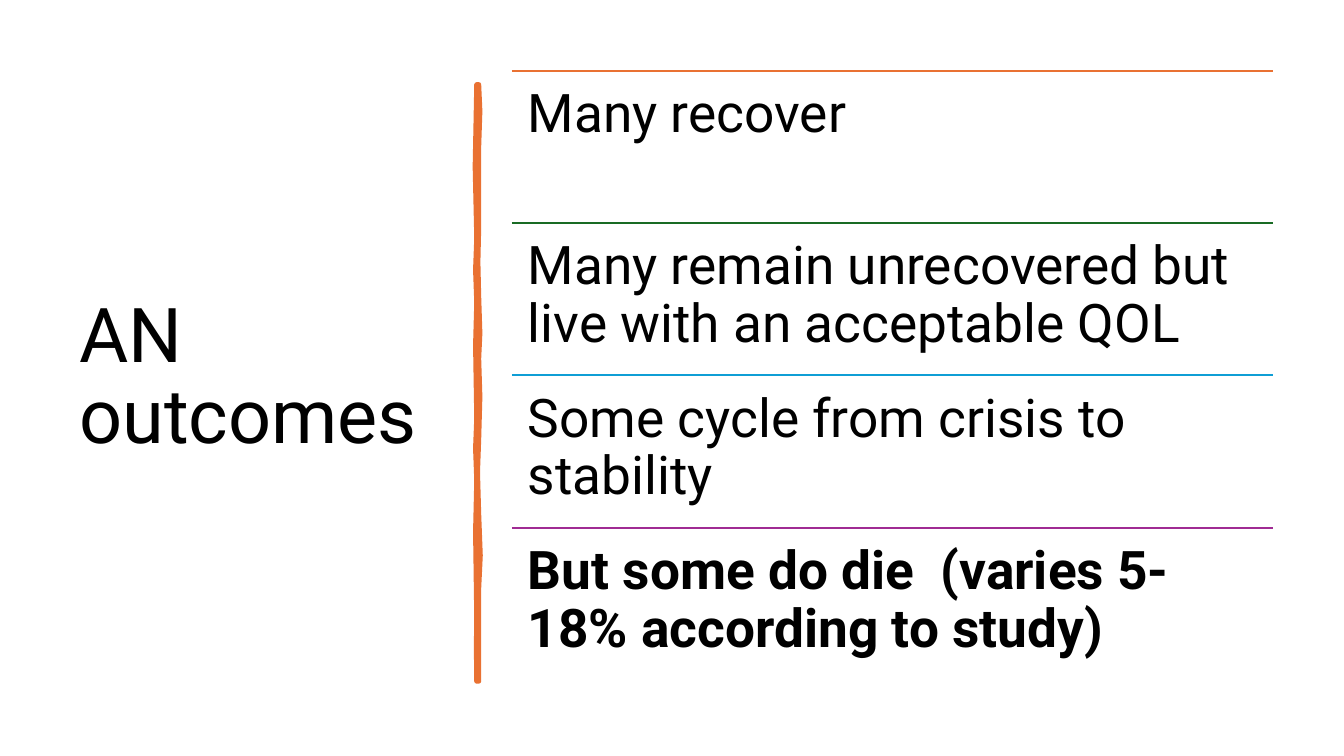
from dataclasses import dataclass

from lxml.etree import SubElement
from pptx import Presentation
from pptx.dml.color import RGBColor
from pptx.enum.shapes import MSO_CONNECTOR
from pptx.enum.text import MSO_ANCHOR
from pptx.oxml.ns import qn
from pptx.shapes.connector import Connector
from pptx.util import Cm, Pt

BLACK = RGBColor(0x00, 0x00, 0x00)
ORANGE = RGBColor(0xE9, 0x71, 0x32)
GREEN = RGBColor(0x19, 0x6B, 0x24)
BLUE = RGBColor(0x0F, 0x9E, 0xD5)
PURPLE = RGBColor(0xA0, 0x2B, 0x93)

LIST_LEFT, LIST_TOP, LIST_WIDTH, ROW_HEIGHT = 12.9, 1.78, 19.18, 3.84

STROKE_RIGHT = [
    (12.07, 2.13), (12.1, 2.8), (12.07, 3.7), (12.07, 5.74), (12.05, 6.6),
    (12.07, 7.47), (12.1, 8.4), (12.07, 9.04), (12.1, 10), (12.07, 11.07),
    (12.04, 11.9), (12.07, 12.95), (12.11, 14), (12.07, 14.83), (12.07, 17.17),
]
STROKE_LEFT = [
    (12.01, 17.17), (12, 16.3), (12.01, 15.57), (11.98, 13.4), (12.01, 12.1),
    (11.98, 11.3), (12.01, 10.54), (11.98, 8.7), (12.01, 7.62), (11.98, 6.8),
    (12.01, 6), (11.97, 4.2), (12.01, 2.13),
]


@dataclass(frozen=True)
class Outcome:
    text: str
    color: RGBColor
    bold: bool = False


@dataclass(frozen=True)
class Box:
    left: float
    top: float
    width: float
    height: float
    inset: float
    anchor: MSO_ANCHOR


OUTCOMES = [
    Outcome("Many recover", ORANGE),
    Outcome("Many remain unrecovered but live with an acceptable QOL", GREEN),
    Outcome("Some cycle from crisis to stability", BLUE),
    Outcome("But some do die  (varies 5-18% according to study)", PURPLE, True),
]


def add_text(s, box: Box, text: str, size: float, bold: bool = False) -> None:
    sp = s.shapes.add_textbox(
        Cm(box.left), Cm(box.top), Cm(box.width), Cm(box.height))
    tf = sp.text_frame
    frame_format = {"word_wrap": True, "vertical_anchor": box.anchor}
    for side in ("left", "top", "right", "bottom"):
        frame_format[f"margin_{side}"] = Cm(box.inset)
    for name, value in frame_format.items():
        setattr(tf, name, value)
    p = tf.paragraphs[0]
    p.line_spacing = 0.9
    r = p.add_run()
    r.text = text
    font_format = {"name": "Roboto", "size": Pt(size), "bold": bold}
    for name, value in font_format.items():
        setattr(r.font, name, value)
    r.font.color.rgb = BLACK


def add_rule(s, top: float, color: RGBColor) -> Connector:
    rule = s.shapes.add_connector(
        MSO_CONNECTOR.STRAIGHT, Cm(LIST_LEFT), Cm(top),
        Cm(LIST_LEFT + LIST_WIDTH), Cm(top))
    rule.line.color.rgb = color
    rule.line.width = Pt(1.5)
    SubElement(rule._element.spPr, qn("a:effectLst"))
    return rule


def add_brush_stroke(s) -> None:
    start, *rest = [(Cm(x), Cm(y)) for x, y in STROKE_RIGHT + STROKE_LEFT]
    builder = s.shapes.build_freeform(*start)
    builder.add_line_segments(rest, close=True)
    sp = builder.convert_to_shape()
    sp.shadow.inherit = False
    sp.fill.solid()
    sp.fill.fore_color.rgb = ORANGE
    sp.line.color.rgb = ORANGE
    sp.line.width = Pt(3.25)
    SubElement(sp.line._get_or_add_ln(), qn("a:round"))


def main() -> None:
    prs = Presentation()
    prs.slide_width, prs.slide_height = Cm(33.87), Cm(19.05)
    s = prs.slides.add_slide(prs.slide_layouts[6])
    title_box = Box(1.75, 1.78, 9.5, 15.52, 0.25, MSO_ANCHOR.MIDDLE)
    add_text(s, title_box, "AN outcomes", 54)
    add_brush_stroke(s)
    for i, outcome in enumerate(OUTCOMES):
        top = LIST_TOP + i * ROW_HEIGHT
        add_rule(s, top, outcome.color)
        box = Box(LIST_LEFT, top, LIST_WIDTH, ROW_HEIGHT, 0.4, MSO_ANCHOR.TOP)
        add_text(s, box, outcome.text, 38, outcome.bold)
    prs.save("out.pptx")


if __name__ == "__main__":
    main()
